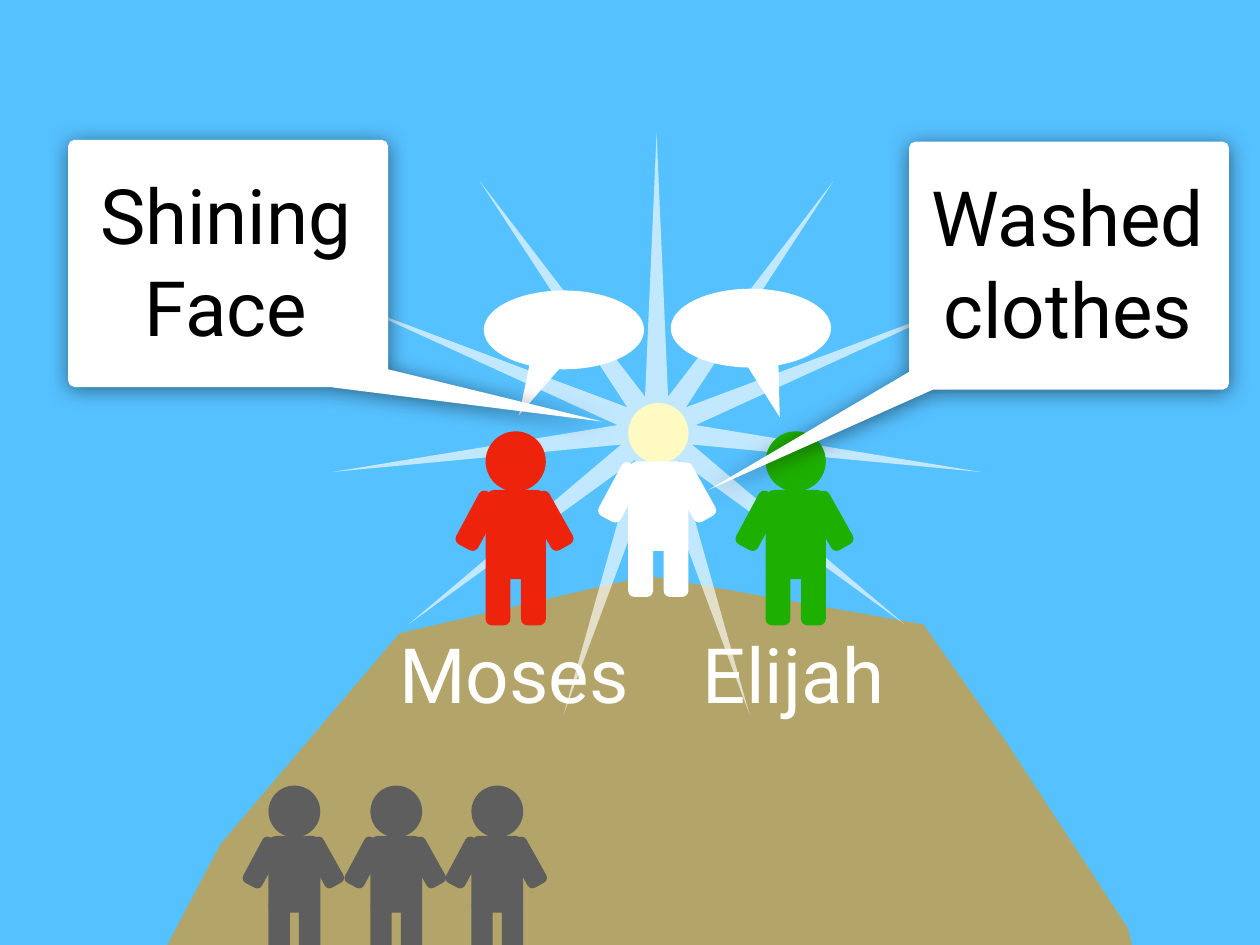
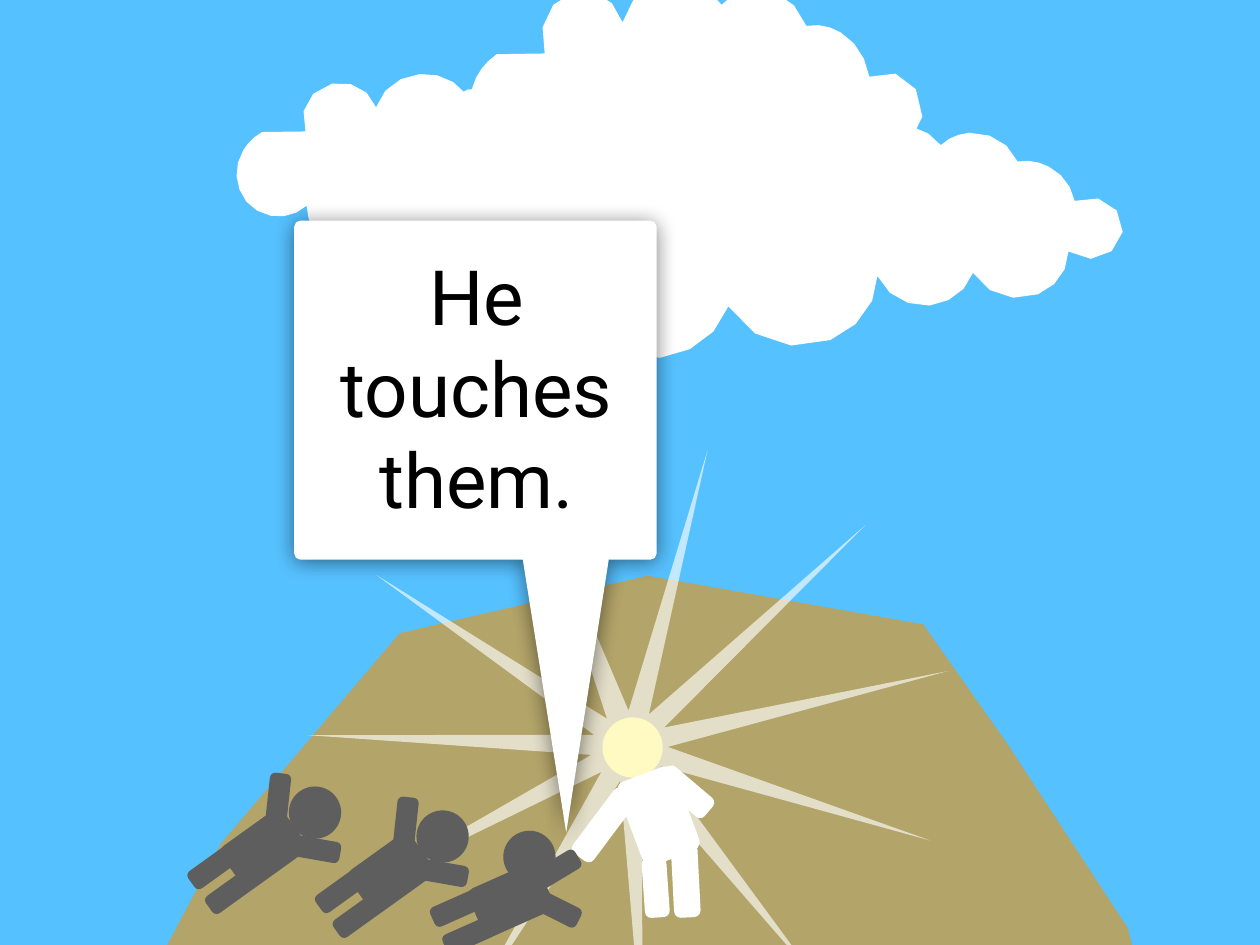
"""Build two slides of a mountain-top story with figures, rays, clouds and bubbles."""
from dataclasses import dataclass
from math import cos, pi, sin
from typing import NamedTuple, Optional

from lxml.etree import SubElement
from pptx import Presentation
from pptx.dml.color import RGBColor
from pptx.enum.shapes import MSO_SHAPE
from pptx.enum.text import MSO_ANCHOR, MSO_AUTO_SIZE, PP_ALIGN
from pptx.oxml.ns import qn
from pptx.shapes.autoshape import Shape
from pptx.slide import Slide
from pptx.util import Inches, Pt

OVAL = MSO_SHAPE.OVAL
ROUND = MSO_SHAPE.ROUNDED_RECTANGLE
RECT = MSO_SHAPE.RECTANGLE
SPEECH = MSO_SHAPE.OVAL_CALLOUT
MIDDLE = MSO_ANCHOR.MIDDLE
GROW = MSO_AUTO_SIZE.SHAPE_TO_FIT_TEXT
CENTER = PP_ALIGN.CENTER

SKY = RGBColor(0x56, 0xC1, 0xFF)
EARTH = RGBColor(0xB3, 0xA4, 0x69)
GLOW = RGBColor(0xFF, 0xF0, 0x56)
WHITE = RGBColor(0xFF, 0xFF, 0xFF)
BLACK = RGBColor(0x00, 0x00, 0x00)
RED = RGBColor(0xEE, 0x23, 0x0C)
GREEN = RGBColor(0x1E, 0xB0, 0x01)
GRAY = RGBColor(0x5E, 0x5E, 0x5E)

FONT = "Roboto"
SIZE = Pt(62)
WIDE, HIGH = 14.22, 10.67

Point = tuple[float, float]


class Part(NamedTuple):
    """One body part, placed from the top left of the head."""
    x: float
    y: float
    w: float
    h: float
    turn: float = 0
    curve: Optional[float] = 0.25


@dataclass(frozen=True)
class Person:
    """A figure in a pose, placed by its head."""
    x: float
    y: float
    pose: tuple[Part, ...]
    color: RGBColor
    head: Optional[RGBColor] = None
    scale: float = 1


class Box(NamedTuple):
    """A place on the slide."""
    x: float
    y: float
    w: float
    h: float


@dataclass(frozen=True)
class Bubble:
    """A text bubble whose tail leaves between its lower corners."""
    text: str
    box: Box
    left: float
    tail: tuple[Point, ...]
    drop: Optional[int] = None


STAND = (
    Part(0, 0, 0.68, 0.68, 0, None),
    Part(0, 0.66, 0.68, 1.01, 0, 0.15),
    Part(0, 1.51, 0.28, 0.68),
    Part(0.4, 1.51, 0.28, 0.68),
    Part(-0.22, 0.67, 0.28, 0.68, 28.2),
    Part(0.59, 0.67, 0.28, 0.68, 330.8),
)
LEAN = (
    Part(0, 0, 0.68, 0.68, 339.4, None),
    Part(0.29, 0.61, 0.68, 1.01, 339.4, 0.15),
    Part(0.46, 1.58, 0.28, 0.68, 356.1),
    Part(0.79, 1.43, 0.3, 0.83, 357.1),
    Part(-0.13, 0.76, 0.29, 0.91, 36.8),
    Part(0.8, 0.5, 0.28, 0.68, 310.3),
)
LIE = (
    Part(0, 0, 0.59, 0.59, 54.3, None),
    Part(-0.58, 0.28, 0.59, 0.86, 54.3, 0.15),
    Part(-0.98, 0.62, 0.24, 0.59, 54.3),
    Part(-0.78, 0.9, 0.24, 0.59, 54.3),
    Part(-0.24, -0.15, 0.24, 0.59, 186.2),
    Part(0.17, 0.41, 0.24, 0.59, 279.9),
)
REACH = (
    Part(0, 0, 0.59, 0.59, 66, None),
    Part(-0.21, 0.35, 0.59, 0.86, 66, 0.15),
    Part(-0.65, 0.58, 0.24, 0.59, 66),
    Part(-0.51, 0.89, 0.24, 0.59, 66),
    Part(0.47, 0.15, 0.24, 0.59, 238.9),
    Part(0.47, 0.58, 0.24, 0.59, 296.7),
)
HILL = [(-0.27, 15.63), (0.95, 12.45), (2.49, 9.53), (4.51, 7.15),
        (7.31, 6.5), (10.42, 7.05), (11.37, 8.4), (12.73, 10.48),
        (13.38, 13.15), (14.03, 14.22), (15.09, 16.58)]
RAYS = [(0, -3.29), (0.13, -0.31), (2, -2.75), (0.33, -0.19),
        (3.37, -1.33), (0.44, 0.01), (3.66, 0.54), (0.4, 0.23),
        (2.8, 2.26), (0.24, 0.4), (1.05, 3.28), (0, 0.46)]
PUFF = Box(0, 0, 7.28, 3.21)
START = (0.05, 2.06)
CURVES = [
    ((0.13, 2.3), (0.35, 2.48), (0.61, 2.53)),
    ((0.84, 2.57), (1.08, 2.5), (1.24, 2.35)),
    ((1.24, 2.59), (1.35, 2.81), (1.54, 2.97)),
    ((2, 3.31), (2.68, 3.18), (2.94, 2.69)),
    ((3.09, 3.03), (3.47, 3.24), (3.86, 3.21)),
    ((4.22, 3.17), (4.52, 2.95), (4.63, 2.63)),
    ((4.85, 3.01), (5.35, 3.18), (5.78, 3.01)),
    ((6.11, 2.88), (6.32, 2.58), (6.32, 2.25)),
    ((6.68, 2.53), (7.22, 2.33), (7.28, 1.9)),
    ((7.33, 1.47), (6.85, 1.15), (6.43, 1.35)),
    ((6.38, 1.09), (6.21, 0.86), (5.97, 0.74)),
    ((5.8, 0.65), (5.61, 0.62), (5.42, 0.65)),
    ((5.28, 0.32), (4.94, 0.12), (4.56, 0.14)),
    ((4.37, 0.16), (4.19, 0.23), (4.06, 0.36)),
    ((3.87, 0.11), (3.56, -0.02), (3.24, 0.01)),
    ((2.88, 0.04), (2.57, 0.27), (2.47, 0.6)),
    ((2.37, 0.29), (2.03, 0.11), (1.69, 0.18)),
    ((1.29, 0.27), (1.07, 0.67), (1.22, 1.03)),
    ((0.45, 1.04),),
    ((0.31, 1.12), (0.2, 1.23), (0.12, 1.36)),
    ((-0.01, 1.57), (-0.04, 1.83), START),
]
CLOUDS = [Box(3.59, 0.83, 7.28, 3.21), Box(2.67, 0.83, 4.64, 2.04),
          Box(8.03, 1.41, 4.64, 2.04), Box(5.29, -0.24, 5.12, 2.63)]


def paint(shape: Shape, color: RGBColor) -> Shape:
    """Give a shape a plain fill without line or shadow."""
    shape.shadow.inherit = False
    shape.fill.solid()
    shape.fill.fore_color.rgb = color
    shape.line.fill.background()
    return shape


def outline(slide: Slide, points: list[Point], color: RGBColor) -> Shape:
    """Draw a closed outline through points in inches."""
    first, *rest = [(Inches(x), Inches(y)) for x, y in points]
    pen = slide.shapes.build_freeform(*first)
    pen.add_line_segments(rest, close=True)
    return paint(pen.convert_to_shape(), color)


def scene(deck: Presentation) -> Slide:
    """Add a slide with sky and hill."""
    slide = deck.slides.add_slide(deck.slide_layouts[6])
    sky = slide.shapes.add_shape(
        RECT, 0, Inches(-0.03), Inches(WIDE), Inches(10.72))
    paint(sky, SKY)
    outline(slide, HILL, EARTH)
    return slide


def figure(slide: Slide, who: Person) -> None:
    """Draw a person as one group."""
    group = slide.shapes.add_group_shape()
    for part in who.pose:
        x, y, w, h = (Inches(v * who.scale) for v in part[:4])
        kind = OVAL if part.curve is None else ROUND
        limb = group.shapes.add_shape(
            kind, Inches(who.x) + x, Inches(who.y) + y, w, h)
        limb.rotation = part.turn
        if part.curve is None:
            paint(limb, who.head or who.color)
        else:
            limb.adjustments[0] = part.curve
            paint(limb, who.color)


def star(slide: Slide, x: float, y: float, turn: float = 0) -> None:
    """Draw see-through rays, mirrored about their axis."""
    left = [(-dx, dy) for dx, dy in reversed(RAYS[1:-1])]
    rays = outline(slide, [(x + dx, y + dy) for dx, dy in RAYS + left], WHITE)
    rays.rotation = turn
    tint = rays._element.spPr.find(qn("a:solidFill"))[0]
    SubElement(tint, qn("a:alpha"), val="64000")


def cloud(slide: Slide, box: Box, steps: int = 3) -> None:
    """Draw the cloud outline scaled to a box."""
    points, last = [START], START
    for *bend, end in CURVES:
        for step in range(1, steps if bend else 1):
            t = step / steps
            u = 1 - t
            points.append(tuple(
                u**3 * a + 3 * u * u * t * b + 3 * u * t * t * c + t**3 * d
                for a, b, c, d in zip(last, *bend, end)))
        points.append(end)
        last = end
    sx, sy = box.w / PUFF.w, box.h / PUFF.h
    outline(slide, [(box.x + x * sx, box.y + y * sy)
                    for x, y in points[:-1]], WHITE)


def label(slide: Slide, text: str, box: Box, color: RGBColor) -> None:
    """Write centred text in a box."""
    frame = slide.shapes.add_textbox(*(Inches(v) for v in box)).text_frame
    frame.word_wrap = True
    frame.auto_size = GROW
    frame.vertical_anchor = MIDDLE
    frame.margin_left = frame.margin_right = Inches(0.06)
    frame.margin_top = frame.margin_bottom = Inches(0.06)
    frame.text = text
    line = frame.paragraphs[0]
    line.alignment = CENTER
    font = line.runs[0].font
    font.name, font.size, font.color.rgb = FONT, SIZE, color


def bubble(slide: Slide, item: Bubble, edge: float = 0.07) -> None:
    """Draw a shadowed bubble with its tail and text."""
    box = item.box
    x, y = box.x + edge, box.y + edge
    right, base = box.x + box.w - edge, box.y + box.h - edge
    points: list[Point] = []
    for i, (cx, cy) in enumerate([(x, y), (right, y), (right, base), (x, base)]):
        if i == 3:
            points.extend(item.tail)
        if i != item.drop:
            turns = [pi * (1 + i / 2 + k / 4) for k in range(3)]
            points += [(cx + edge * cos(a), cy + edge * sin(a)) for a in turns]
    shape = outline(slide, points, WHITE)
    effects = shape._element.spPr.find(qn("a:effectLst"))
    shade = SubElement(effects, qn("a:outerShdw"), blurRad=str(Pt(17)),
                       dist=str(Pt(2)), dir="5400000", rotWithShape="0")
    tint = SubElement(shade, qn("a:srgbClr"), val=str(BLACK))
    SubElement(tint, qn("a:alpha"), val="50000")
    label(slide, item.text, Box(item.left, box.y + 0.11, 4.1, box.h - 0.3), BLACK)


def speech(slide: Slide, x: float, y: float, tip: Point) -> None:
    """Draw an empty oval speech bubble."""
    shape = slide.shapes.add_shape(
        SPEECH, Inches(x), Inches(y), Inches(1.81), Inches(0.89))
    shape.adjustments[0], shape.adjustments[1] = tip
    paint(shape, WHITE)


def vision(deck: Presentation) -> None:
    """Build the slide with the shining face."""
    slide = scene(deck)
    figure(slide, Person(7.09, 4.55, STAND, WHITE, GLOW))
    star(slide, 7.41, 4.79)
    for name, x, color in (("Moses", 5.48, RED), ("Elijah", 8.64, GREEN)):
        figure(slide, Person(x, 4.87, STAND, color))
        label(slide, name, Box(x - 2.85, 6.96, 6.34, 1.28), WHITE)
    speech(slide, 5.46, 3.28, (-0.28, 1.08))
    speech(slide, 7.57, 3.26, (0.18, 1.13))
    for x in (4.18, 5.32, 3.03):
        figure(slide, Person(x, 8.87, STAND, GRAY, scale=0.86))
    bubble(slide, Bubble("Shining Face", Box(0.77, 1.58, 3.61, 2.79), 0.5,
                         ((4.38, 4.17), (6.8, 4.76), (3.72, 4.37)), 2))
    bubble(slide, Bubble("Washed clothes", Box(10.26, 1.6, 3.61, 2.8), 10,
                         ((10.53, 4.4), (8, 5.53), (10.26, 4.2)), 3))


def touch(deck: Presentation) -> None:
    """Build the slide with the touch."""
    slide = scene(deck)
    figure(slide, Person(6.8, 8.1, LEAN, WHITE, GLOW))
    star(slide, 7.08, 8.36, 339.4)
    figure(slide, Person(4.7, 9.15, LIE, GRAY))
    figure(slide, Person(5.68, 9.38, REACH, GRAY))
    for box in CLOUDS:
        cloud(slide, box)
    bubble(slide, Bubble("He touches them.", Box(3.32, 2.49, 4.09, 3.83), 3.33,
                         ((6.87, 6.32), (6.39, 9.4), (5.9, 6.32))))
    figure(slide, Person(3.26, 8.88, LIE, GRAY))


def main() -> None:
    """Build and save the deck."""
    deck = Presentation()
    deck.slide_width, deck.slide_height = Inches(WIDE), Inches(HIGH)
    vision(deck)
    touch(deck)
    deck.save("out.pptx")


if __name__ == "__main__":
    main()
